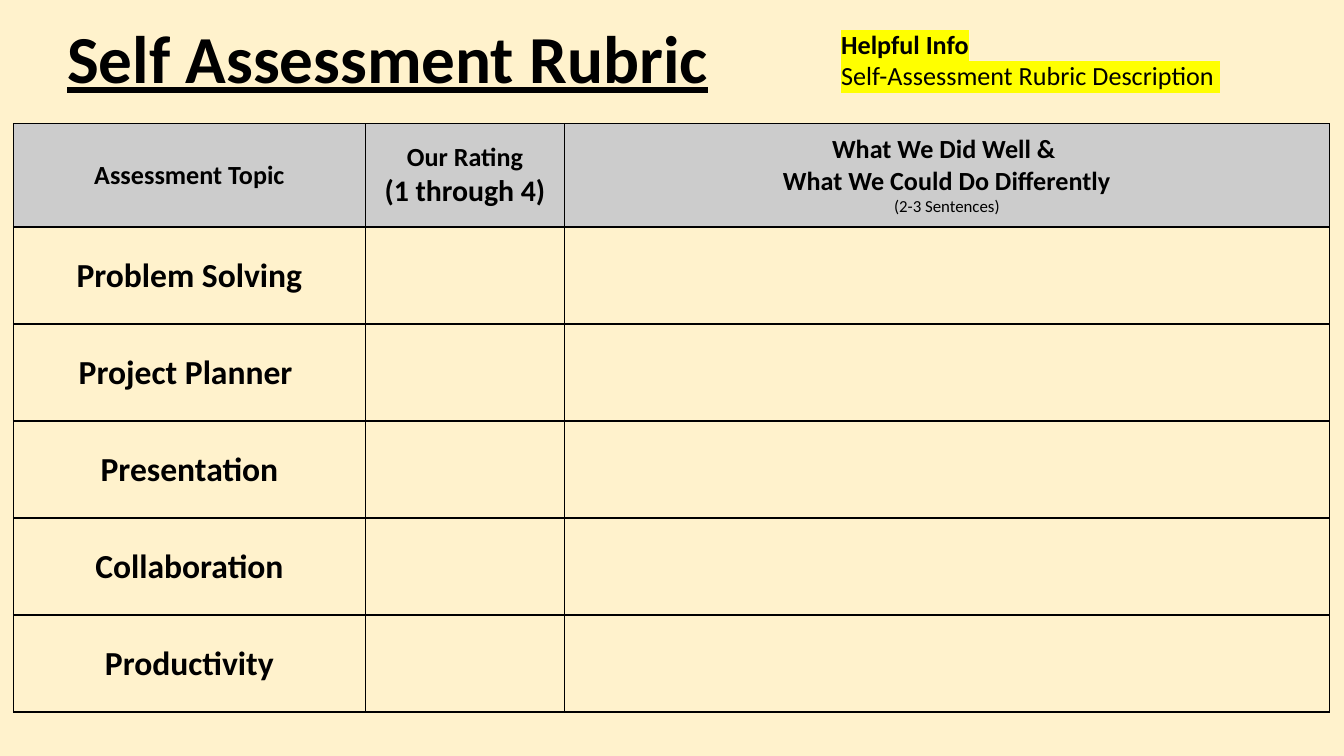
from lxml.etree import SubElement
from pptx import Presentation
from pptx.dml.color import RGBColor
from pptx.enum.text import MSO_ANCHOR as Anchor, MSO_AUTO_SIZE as AutoSize, PP_ALIGN as Align
from pptx.oxml.ns import qn
from pptx.util import Inches, Pt

# Content: each line is (text, size, bold)
TITLE = [("Self Assessment Rubric", 36, True)]
INFO = [("Helpful Info", 14, True), ("Self-Assessment Rubric Description ", 14, False)]
HEADERS = [
    [("Assessment Topic", 14, True)],
    [("Our Rating", 14, True), ("(1 through 4)", 16, True)],
    [("What We Did Well & ", 14, True), ("What We Could Do Differently", 14, True),
     ("(2-3 Sentences)", 9, False)],
]
TOPICS = ["Problem Solving", "Project Planner ", "Presentation", "Collaboration", "Productivity"]

COLORS = {"page": "FFF2CC", "header": "CCCCCC", "ink": "000000", "highlight": "FFFF00"}
FONT = "Calibri"
SLIDE_WIDTH = 10
SLIDE_HEIGHT = SLIDE_WIDTH * 9 / 16
COLUMN_WIDTHS = [2.62, 1.48, 5.69]
HEADER_HEIGHT, TOPICS_HEIGHT = 0.77, 3.61
TOPIC_HEIGHT = TOPICS_HEIGHT / len(TOPICS)


def rgb(name):
    return RGBColor.from_string(COLORS[name])


def write(frame, lines, align, underline=False):
    frame.text = "\n".join(text for text, _, _ in lines)
    for paragraph, (_, size, bold) in zip(frame.paragraphs, lines):
        paragraph.alignment = align
        paragraph.space_before = Pt(0)
        for run in paragraph.runs:
            font = run.font
            font.name, font.size, font.bold = FONT, Pt(size), bold
            font.underline = underline
            font.color.rgb = rgb("ink")


def set_insets(frame, inset):
    frame.margin_left = frame.margin_right = Inches(inset)
    frame.margin_top = frame.margin_bottom = Inches(inset)


def highlight(run):
    properties = run.font._element
    marker = SubElement(properties, qn("a:highlight"))
    SubElement(marker, qn("a:srgbClr"), val=COLORS["highlight"])
    properties.find(qn("a:solidFill")).addnext(marker)


def add_borders(cell):
    properties = cell._tc.get_or_add_tcPr()
    for position, side in enumerate(("lnL", "lnR", "lnT", "lnB")):
        line = SubElement(properties, qn(f"a:{side}"), w=str(Pt(0.75)))
        fill = SubElement(line, qn("a:solidFill"))
        SubElement(fill, qn("a:srgbClr"), val=COLORS["ink"])
        properties.insert(position, line)


def main():
    prs = Presentation()
    prs.slide_width, prs.slide_height = Inches(SLIDE_WIDTH), Inches(SLIDE_HEIGHT)
    slide = prs.slides.add_slide(prs.slide_layouts[5])
    slide.background.fill.solid()
    slide.background.fill.fore_color.rgb = rgb("page")

    # Title
    title = slide.shapes.title
    title.left, title.top = Inches(0.4), Inches(0.23)
    title.width, title.height = Inches(5.95), Inches(0.59)
    heading = title.text_frame
    heading.auto_size = AutoSize.NONE
    heading.vertical_anchor = Anchor.BOTTOM
    set_insets(heading, 0.1)
    write(heading, TITLE, Align.LEFT, underline=True)

    # Rubric table
    rubric = slide.shapes.add_table(
        len(TOPICS) + 1, len(HEADERS), Inches(0.1), Inches(0.92),
        Inches(sum(COLUMN_WIDTHS)), Inches(HEADER_HEIGHT + TOPICS_HEIGHT)).table
    rubric.first_row = rubric.horz_banding = False
    for column, width in zip(rubric.columns, COLUMN_WIDTHS):
        column.width = Inches(width)
    for index, row in enumerate(rubric.rows):
        row.height = Inches(TOPIC_HEIGHT if index else HEADER_HEIGHT)
        for cell in row.cells:
            cell.vertical_anchor = Anchor.MIDDLE
            cell.margin_left = cell.margin_right = Inches(0.1)
            cell.margin_top = cell.margin_bottom = Inches(0.07)
            if index:
                cell.fill.background()
            else:
                cell.fill.solid()
                cell.fill.fore_color.rgb = rgb("header")
            add_borders(cell)
    for column, lines in enumerate(HEADERS):
        write(rubric.cell(0, column).text_frame, lines, Align.CENTER)
    for row, topic in enumerate(TOPICS, start=1):
        write(rubric.cell(row, 0).text_frame, [(topic, 18, True)], Align.CENTER)

    # Helpful info note
    info = slide.shapes.add_textbox(Inches(6.16), Inches(0.15), Inches(3.28), Inches(0.59)).text_frame
    info.word_wrap = True
    info.vertical_anchor = Anchor.MIDDLE
    set_insets(info, 0.1)
    write(info, INFO, Align.LEFT)
    for paragraph in info.paragraphs:
        highlight(paragraph.runs[0])

    prs.save("out.pptx")


if __name__ == "__main__":
    main()
